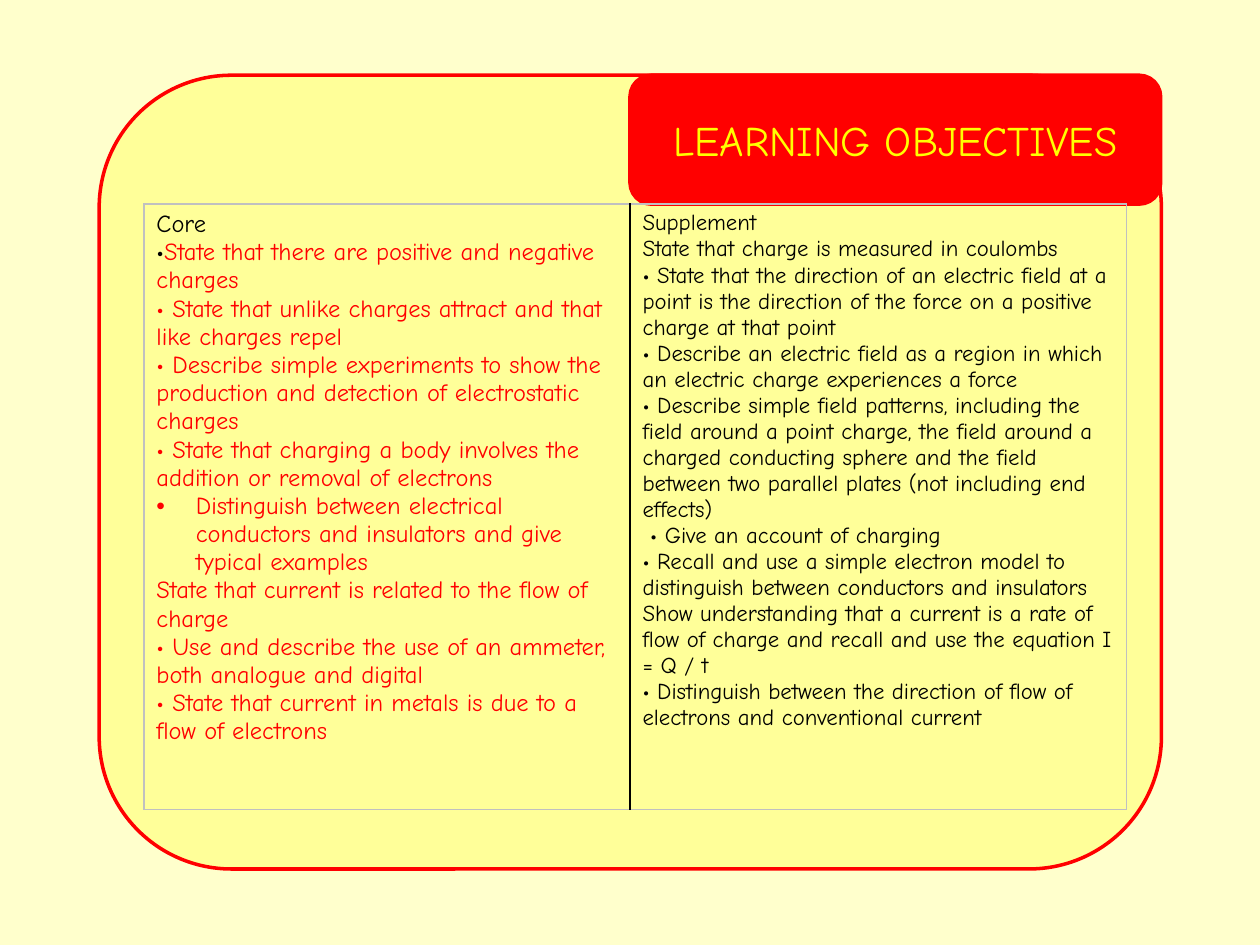
from dataclasses import dataclass

from lxml import etree
from pptx import Presentation
from pptx import util as u
from pptx.dml.color import RGBColor
from pptx.enum import shapes, text
from pptx.oxml import ns

CREAM = RGBColor(0xFF, 0xFF, 0xCC)
PALE_YELLOW = RGBColor(0xFF, 0xFF, 0x99)
YELLOW = RGBColor(0xFF, 0xFF, 0x00)
RED = RGBColor(0xFF, 0x00, 0x00)
BLACK = RGBColor(0x00, 0x00, 0x00)
GREY = RGBColor(0xC0, 0xC0, 0xC0)

CORE = [
    "• State that unlike charges attract and that like charges repel",
    "• Describe simple experiments to show the production and detection of electrostatic charges",
    "• State that charging a body involves the addition or removal of electrons",
    "Distinguish between electrical conductors and insulators and give typical examples",
    "State that current is related to the flow of charge",
    "• Use and describe the use of an ammeter, both analogue and digital",
    "• State that current in metals is due to a flow of electrons",
]
SUPPLEMENT = [
    "Supplement",
    "State that charge is measured in coulombs",
    "• State that the direction of an electric field at a point is the direction of the force on a positive charge at that point",
    "• Describe an electric field as a region in which an electric charge experiences a force",
    "• Describe simple field patterns, including the field around a point charge, the field around a charged conducting sphere and the field between two parallel plates (not including end effects)",
    " • Give an account of charging",
    "• Recall and use a simple electron model to distinguish between conductors and insulators",
    "Show understanding that a current is a rate of flow of charge and recall and use the equation I = Q / t",
    "• Distinguish between the direction of flow of electrons and conventional current",
]


@dataclass
class ObjectivesSlide:
    slide: object
    font: str = "Comic Neue"
    outline: float = 2
    border: float = 1

    def panel(self, kind, left, top, width, height, fill, line=None):
        shape = self.slide.shapes.add_shape(
            kind, u.Pt(left), u.Pt(top), u.Pt(width), u.Pt(height))
        shape.shadow.inherit = False
        shape.fill.solid()
        shape.fill.fore_color.rgb = fill
        if line is None:
            shape.line.fill.background()
        else:
            shape.line.color.rgb = line
            shape.line.width = u.Pt(self.outline)
        return shape

    def run(self, paragraph, words, size, color):
        run = paragraph.add_run()
        run.text = words
        run.font.name = self.font
        run.font.size = u.Pt(size)
        run.font.color.rgb = color

    def title(self, shape, words):
        frame = shape.text_frame
        frame.word_wrap = True
        frame.vertical_anchor = text.MSO_ANCHOR.MIDDLE
        paragraph = frame.paragraphs[0]
        paragraph.alignment = text.PP_ALIGN.CENTER
        self.run(paragraph, words, 24, YELLOW)

    def table(self, left, top, widths, height):
        frame = self.slide.shapes.add_table(
            1, len(widths), u.Pt(left), u.Pt(top), u.Pt(sum(widths)), u.Pt(height))
        table = frame.table
        table.first_row = table.horz_banding = False
        for column, width in zip(table.columns, widths):
            column.width = u.Pt(width)
        return table

    def borders(self, cell, colors):
        properties = cell._tc.get_or_add_tcPr()
        for side, color in zip("LRTB", colors):
            line = etree.SubElement(properties, ns.qn(f"a:ln{side}"), w=str(u.Pt(self.border)))
            fill = etree.SubElement(line, ns.qn("a:solidFill"))
            etree.SubElement(fill, ns.qn("a:srgbClr"), val=str(color))
        cell.fill.background()

    def bullet(self, paragraph, indent):
        properties = paragraph._p.get_or_add_pPr()
        properties.set("marL", str(u.Pt(indent)))
        properties.set("indent", str(-u.Pt(indent)))
        etree.SubElement(properties, ns.qn("a:buFont"), typeface="Arial")
        etree.SubElement(properties, ns.qn("a:buChar"), char="•")

    def paragraphs(self, cell, items, size):
        frame = cell.text_frame
        for index, runs in enumerate(items):
            paragraph = frame.add_paragraph() if index else frame.paragraphs[0]
            if runs[0][0].startswith("Distinguish"):
                self.bullet(paragraph, 22.5)
            for words, color in runs:
                self.run(paragraph, words, size, color)


def main():
    presentation = Presentation()
    presentation.slide_width, presentation.slide_height = u.Pt(720), u.Pt(540)
    page = ObjectivesSlide(presentation.slides.add_slide(presentation.slide_layouts[6]))
    rounded = shapes.MSO_SHAPE.ROUNDED_RECTANGLE

    page.panel(shapes.MSO_SHAPE.RECTANGLE, 0, 0, 720, 540, CREAM)
    page.panel(rounded, 56.7, 43, 607, 453.6, PALE_YELLOW, RED)
    header = page.panel(rounded, 360, 43, 303.3, 73.7, RED, RED)
    page.title(header, "LEARNING OBJECTIVES")

    table = page.table(82.2, 116.7, [277.8, 283.6], 345.8)
    core, supplement = table.cell(0, 0), table.cell(0, 1)
    page.borders(core, [GREY, BLACK, GREY, GREY])
    page.borders(supplement, [BLACK, GREY, GREY, GREY])
    opening = [
        [("Core", BLACK)],
        [("•", BLACK), ("State that there are positive and negative charges", RED)],
    ]
    page.paragraphs(core, opening + [[(words, RED)] for words in CORE], 14)
    page.paragraphs(supplement, [[(words, BLACK)] for words in SUPPLEMENT], 13)

    presentation.save("out.pptx")


if __name__ == "__main__":
    main()
